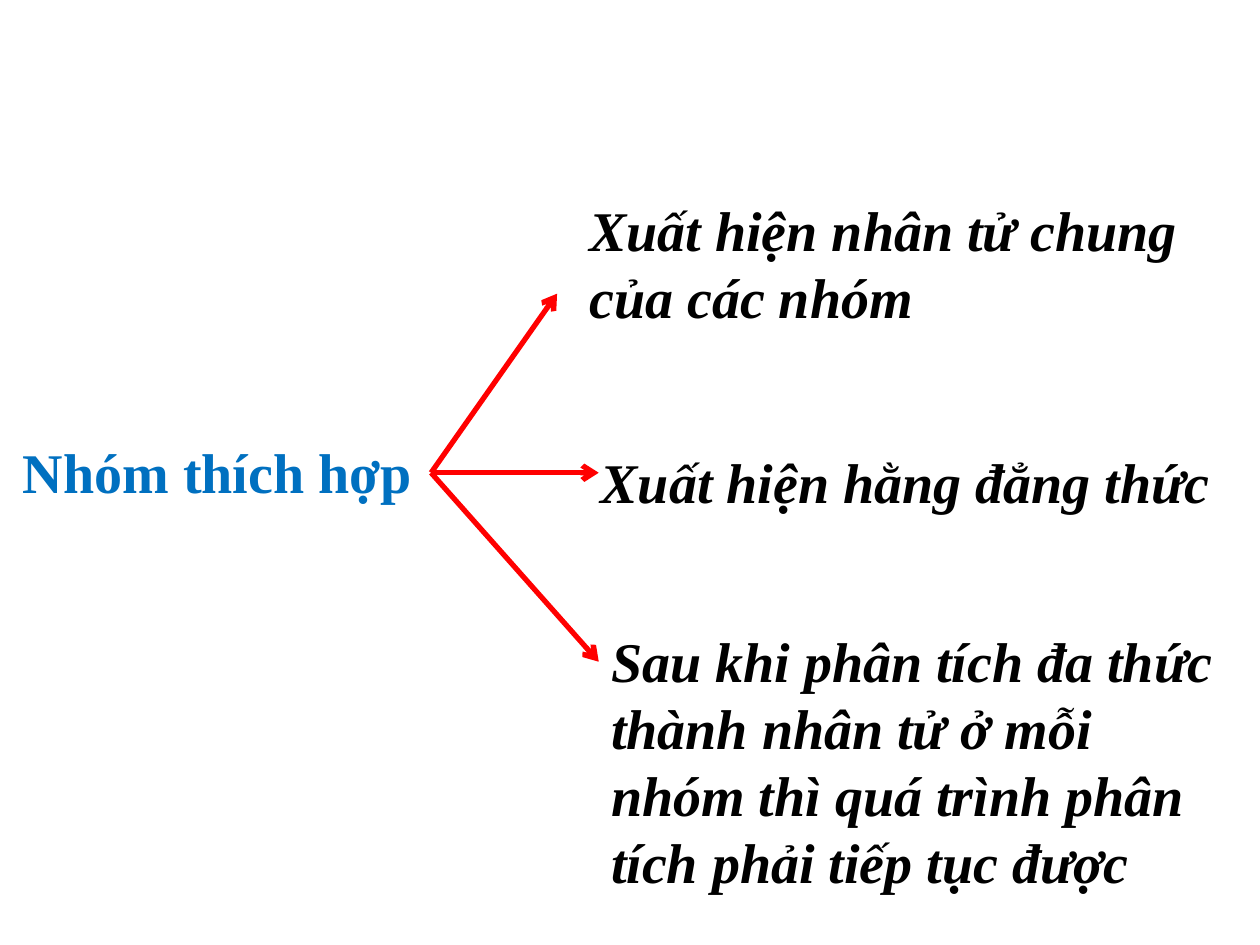
from pptx import Presentation
from pptx.util import Cm, Pt
from pptx.dml.color import RGBColor
from pptx.enum.shapes import MSO_CONNECTOR as Link
from pptx.oxml.ns import qn
from lxml.etree import SubElement as Sub

INK, BLUE, RED = "000000", "0070C0", "FF0000"
FONT = {"name": "Times New Roman", "size": Pt(32), "bold": True}
HUB = (8.69, 9.53)

# Each result: text, left and top of its box, tip of its arrow
GOALS = [
    ("Xuất hiện nhân tử chung của các nhóm", 11.63, 3.81, (11.23, 5.92)),
    ("Xuất hiện hằng đẳng thức", 11.86, 8.89, (12.07, 9.53)),
    ("Sau khi phân tích đa thức thành nhân tử ở mỗi nhóm "
     "thì quá trình phân tích phải tiếp tục được", 12.07, 12.5, (12.07, 13.34)),
]


def paint(color, tone):
    color.rgb = RGBColor.from_string(tone)


def add_text(slide, text, left, top, width, tone, **extra):
    box = slide.shapes.add_textbox(Cm(left), Cm(top), Cm(width), Cm(3.38))
    frame = box.text_frame
    frame.word_wrap = True
    para = frame.paragraphs[0]
    para.space_before = Pt(6.4)
    run = para.add_run()
    run.text = text
    for key, val in {**FONT, **extra}.items():
        setattr(run.font, key, val)
    paint(run.font.color, tone)


def add_arrow(slide, start, end):
    ends = [Cm(num) for num in start + end]
    arrow = slide.shapes.add_connector(Link.STRAIGHT, *ends)
    arrow.line.width = Pt(3)
    paint(arrow.line.color, RED)
    # Open arrowhead, no shadow
    props = arrow._element.spPr
    Sub(props.find(qn("a:ln")), qn("a:tailEnd"), type="arrow")
    Sub(props, qn("a:effectLst"))


def main():
    deck = Presentation()
    deck.slide_width, deck.slide_height = Cm(25.4), Cm(19.05)
    slide = deck.slides.add_slide(deck.slide_layouts[6])

    # Main idea
    add_text(slide, "Nhóm thích hợp", 0.21, 8.69, 22.43, BLUE)

    # Results, then the arrows that lead to them
    for text, left, top, _ in GOALS:
        add_text(slide, text, left, top, 12.9, INK, italic=True)
    for *_, tip in GOALS:
        add_arrow(slide, HUB, tip)

    deck.save("out.pptx")


if __name__ == "__main__":
    main()
